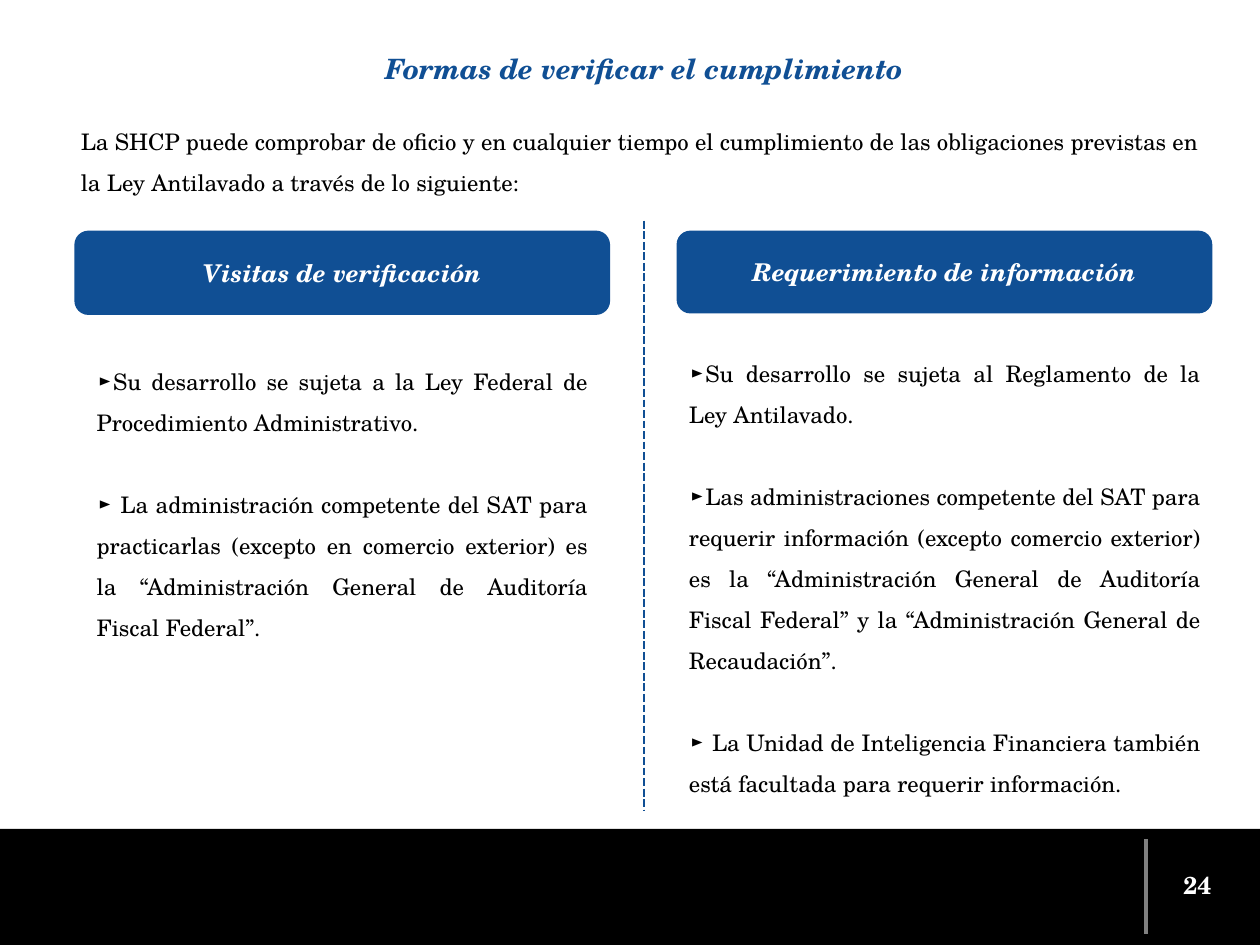
from lxml.etree import SubElement
from pptx import Presentation
from pptx.dml.color import RGBColor
from pptx.enum.dml import MSO_LINE_DASH_STYLE as Dash
from pptx.enum.shapes import MSO_CONNECTOR as Connector, MSO_SHAPE as Shape
from pptx.enum.text import MSO_ANCHOR as Anchor, MSO_AUTO_SIZE as AutoSize, PP_ALIGN as Align
from pptx.oxml.ns import qn
from pptx.util import Cm, Pt

COLOURS = {"blue": "104F94", "black": "000000", "white": "FFFFFF", "grey": "808080"}
FONT = "TeX Gyre Schola"
TITLE_ONLY = 5
BODY_SIZE = 13
BODY_SPACING = 1.5
ITEM_GAP = 23.4

COLUMNS = [
    {
        "heading": "Visitas de verificación",
        "heading_area": (1.5, 4.65, 10.8, 1.7),
        "body_area": (1.7, 7.14, 10.39, 5.77),
        "items": [
            "►Su desarrollo se sujeta a la Ley Federal de Procedimiento Administrativo.",
            "► La administración competente del SAT para practicarlas (excepto en comercio "
            "exterior) es la “Administración General de Auditoría Fiscal Federal”.",
        ],
    },
    {
        "heading": "Requerimiento de información",
        "heading_area": (13.64, 4.65, 10.8, 1.67),
        "body_area": (13.64, 6.91, 10.8, 9.22),
        "items": [
            "►Su desarrollo se sujeta al Reglamento de la Ley Antilavado.",
            "►Las administraciones competente del SAT para requerir información (excepto "
            "comercio exterior) es la “Administración General de Auditoría Fiscal Federal” "
            "y la “Administración General de Recaudación”.",
            "► La Unidad de Inteligencia Financiera también está facultada para requerir "
            "información.",
        ],
    },
]


def colour(name):
    return RGBColor.from_string(COLOURS[name])


class SlideBuilder:
    def __init__(self, page):
        self.page = page

    def fill_text(self, box, texts, size, ink, align, bold=False, italic=False,
                  spacing=1.0, anchor=Anchor.MIDDLE, insets=(0.25, 0.13)):
        frame = box.text_frame
        frame.word_wrap = True
        frame.auto_size = AutoSize.NONE
        frame.vertical_anchor = anchor
        frame.margin_left = frame.margin_right = Cm(insets[0])
        frame.margin_top = frame.margin_bottom = Cm(insets[1])
        for index, text in enumerate(texts):
            para = frame.add_paragraph() if index else frame.paragraphs[0]
            para.alignment = align
            para.line_spacing = spacing
            para.space_before = Pt(ITEM_GAP if index else 0)
            span = para.add_run()
            span.text = text
            font = span.font
            font.name, font.size = FONT, Pt(size)
            font.bold, font.italic = bold, italic
            font.color.rgb = colour(ink)

    def title(self, text, area):
        box = self.page.shapes.title
        box.left, box.top, box.width, box.height = map(Cm, area)
        self.fill_text(box, [text], 16, "blue", Align.CENTER, bold=True, italic=True,
                       spacing=0.9, insets=(0.18, 0.1))

    def textbox(self, area, texts, size, ink, align, **style):
        box = self.page.shapes.add_textbox(*map(Cm, area))
        self.fill_text(box, texts, size, ink, align, **style)

    def panel(self, area, fill, kind=Shape.RECTANGLE):
        box = self.page.shapes.add_shape(kind, *map(Cm, area))
        box.shadow.inherit = False
        box.fill.solid()
        box.fill.fore_color.rgb = colour(fill)
        box.line.fill.background()
        return box

    def heading(self, area, text):
        box = self.panel(area, "blue", Shape.ROUNDED_RECTANGLE)
        self.fill_text(box, [text], 14, "white", Align.CENTER, bold=True, italic=True)

    def body(self, area, items):
        box = self.panel(area, "white")
        self.fill_text(box, items, BODY_SIZE, "black", Align.JUSTIFY, spacing=BODY_SPACING)

    def vertical_line(self, x, top, bottom, ink, width, dash=None):
        line = self.page.shapes.add_connector(
            Connector.STRAIGHT, Cm(x), Cm(top), Cm(x), Cm(bottom))
        line.line.color.rgb = colour(ink)
        line.line.width = Pt(width)
        if dash:
            line.line.dash_style = dash
        SubElement(line._element.spPr, qn("a:effectLst"))


def main():
    deck = Presentation()
    deck.slide_width, deck.slide_height = Cm(25.4), Cm(19.05)
    page = deck.slides.add_slide(deck.slide_layouts[TITLE_ONLY])
    builder = SlideBuilder(page)

    builder.panel((0, 16.71, 25.4, 2.34), "black")
    builder.vertical_line(23.1, 16.92, 18.82, "grey", 2)
    builder.title("Formas de verificar el cumplimiento", (1.5, 0.97, 22.96, 0.91))
    builder.textbox((23.14, 17.32, 2, 1.02), ["24"], 14, "white", Align.CENTER, bold=True)
    builder.textbox(
        (1.3, 2.13, 23.16, 2),
        ["La SHCP puede comprobar de oficio y en cualquier tiempo el cumplimiento de las "
         "obligaciones previstas en la Ley Antilavado a través de lo siguiente:"],
        BODY_SIZE, "black", Align.JUSTIFY, spacing=BODY_SPACING,
        anchor=Anchor.TOP, insets=(0.33, 0.18))

    for column in COLUMNS:
        builder.heading(column["heading_area"], column["heading"])
        builder.body(column["body_area"], column["items"])
    builder.vertical_line(12.98, 4.45, 16.33, "blue", 1.5, Dash.SQUARE_DOT)

    deck.save("out.pptx")


if __name__ == "__main__":
    main()
